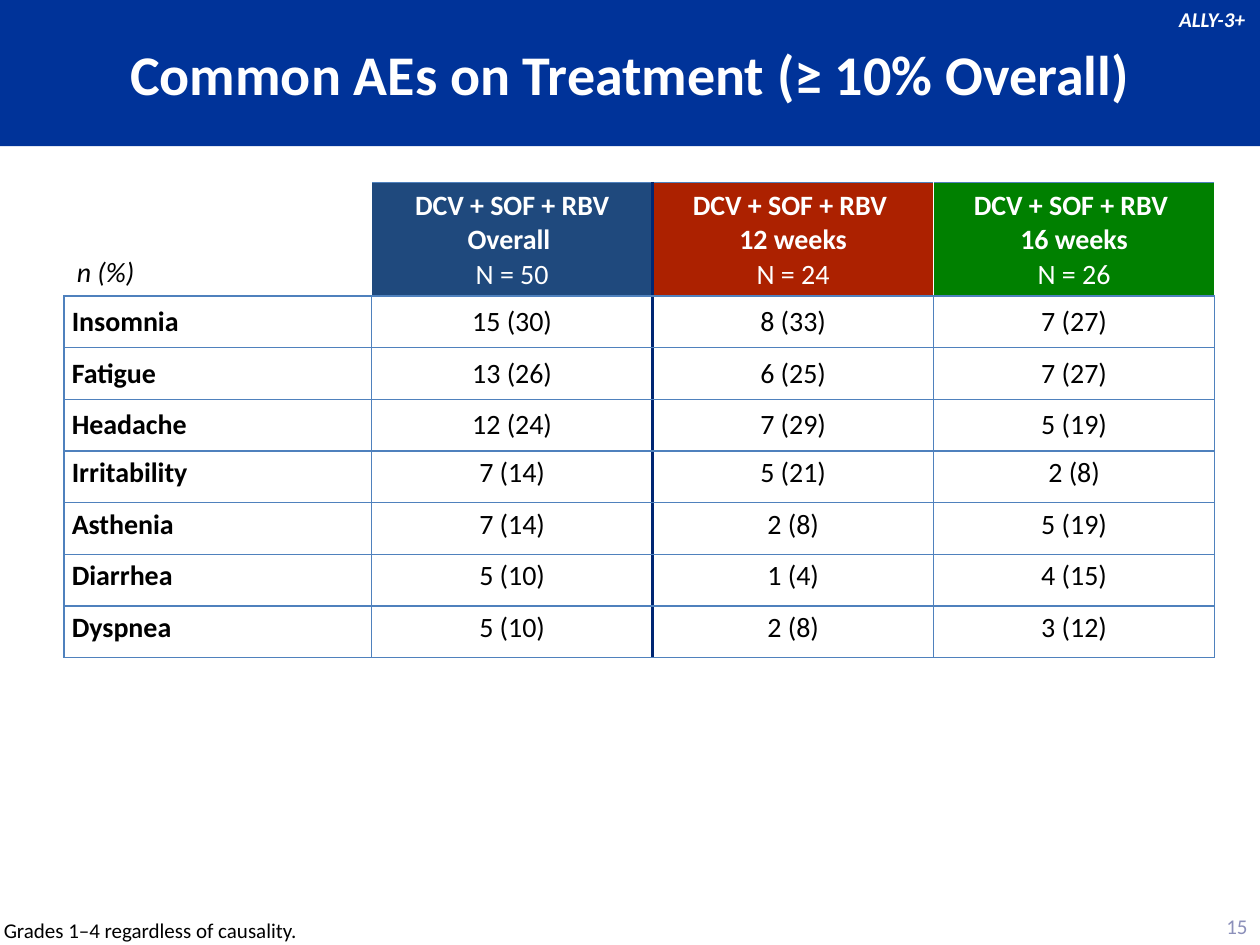
from dataclasses import dataclass
from typing import NamedTuple

from lxml import etree
from pptx import Presentation
from pptx.dml.color import RGBColor
from pptx.enum.text import MSO_ANCHOR, MSO_AUTO_SIZE, PP_ALIGN
from pptx.oxml.ns import qn
from pptx.util import Inches, Pt

LEFT, MID, RIGHT = PP_ALIGN.LEFT, PP_ALIGN.CENTER, PP_ALIGN.RIGHT
TOP, HALF, BASE = MSO_ANCHOR.TOP, MSO_ANCHOR.MIDDLE, MSO_ANCHOR.BOTTOM
FIT, FIXED = MSO_AUTO_SIZE.SHAPE_TO_FIT_TEXT, MSO_AUTO_SIZE.NONE


@dataclass(frozen=True)
class Theme:
    font: str = "Calibri"
    head: int = 32
    body: int = 16
    note: int = 12
    black: str = "000000"
    white: str = "FFFFFF"
    band: str = "003399"
    page: str = "8C90BA"
    grid: str = "4F81BD"
    rule: str = "002673"


class Style(NamedTuple):
    size: int
    color: str
    bold: bool = False
    slant: bool = False
    align: PP_ALIGN = LEFT


class Label(NamedTuple):
    text: str
    box: tuple[float, float, float, float]
    style: Style
    anchor: MSO_ANCHOR = TOP
    inset: tuple[float, float] = (0.1, 0.05)


class Arm(NamedTuple):
    lines: tuple[str, ...]
    fill: str


class Event(NamedTuple):
    name: str
    counts: tuple[str, str, str]
    anchor: MSO_ANCHOR = TOP


class Edge(NamedTuple):
    color: str | None
    width: float = 1


THEME = Theme()
THIN, WHITE = Edge(THEME.grid), Edge(THEME.white)
THICK, BARE = Edge(THEME.rule, 2.25), Edge(None)
PAD, SLIM = (0.1, 0.05), (0.06, 0.04)

LABELS = (
    Label("Grades 1–4 regardless of causality.", (0.03, 7.28, 2.35, 0.2),
          Style(THEME.note, THEME.black), BASE, (0, 0)),
    Label("ALLY-3+", (9.26, 0, 0.74, 0.3),
          Style(THEME.note, THEME.white, bold=True, slant=True)),
    Label("15", (9.63, 7.2, 0.37, 0.3),
          Style(THEME.note, THEME.page, align=RIGHT), HALF),
)
ARMS = (
    Arm(("DCV + SOF + RBV", "Overall ", "N = 50"), "1F497D"),
    Arm(("DCV + SOF + RBV \v12 weeks", "N = 24"), "AC2100"),
    Arm(("DCV + SOF + RBV \v16 weeks", "N = 26"), "008000"),
)
EVENTS = (
    Event("Insomnia", ("15 (30)", "8 (33)", "7 (27)"), HALF),
    Event("Fatigue", ("13 (26)", "6 (25)", "7 (27)"), HALF),
    Event("Headache", ("12 (24)", "7 (29)", "5 (19)"), HALF),
    Event("Irritability", ("7 (14)", "5 (21)", "2 (8)")),
    Event("Asthenia", ("7 (14)", "2 (8)", "5 (19)")),
    Event("Diarrhea", ("5 (10)", "1 (4)", "4 (15)")),
    Event("Dyspnea", ("5 (10)", "2 (8)", "3 (12)")),
)


def paint(target, color: str) -> None:
    target.fill.solid()
    target.fill.fore_color.rgb = RGBColor.from_string(color)


def dress(para, style: Style) -> None:
    """Format a paragraph and its runs."""
    para.alignment = style.align
    for run in para.runs:
        font = run.font
        font.name, font.size = THEME.font, Pt(style.size)
        font.bold, font.italic = style.bold, style.slant
        font.color.rgb = RGBColor.from_string(style.color)


def pad(target, inset: tuple[float, float]) -> None:
    """Set side and end margins of a cell or text frame."""
    side, end = map(Inches, inset)
    target.margin_left = target.margin_right = side
    target.margin_top = target.margin_bottom = end


def frame(cell, left: Edge, right: Edge, top: Edge, base: Edge) -> None:
    """Draw the four borders of a cell."""
    props = cell._tc.get_or_add_tcPr()
    for spot, (side, edge) in enumerate(zip("LRTB", (left, right, top, base))):
        line = etree.Element(qn(f"a:ln{side}"), w=str(Pt(edge.width)))
        if edge.color:
            fill = etree.SubElement(line, qn("a:solidFill"))
            etree.SubElement(fill, qn("a:srgbClr"), val=edge.color)
        else:
            etree.SubElement(line, qn("a:noFill"))
        props.insert(spot, line)


def fill_cell(cell, text: str, style: Style, anchor: MSO_ANCHOR,
              inset: tuple[float, float], color: str | None = None) -> None:
    cell.text_frame.text = text
    for para in cell.text_frame.paragraphs:
        dress(para, style)
    cell.vertical_anchor = anchor
    pad(cell, inset)
    if color:
        paint(cell, color)
    else:
        cell.fill.background()


def add_title(slide, text: str) -> None:
    title = slide.shapes.title
    title.left, title.top, title.width, title.height = map(
        Inches, (0, 0, 10, 1.16))
    paint(title, THEME.band)
    words = title.text_frame
    words.text = text
    words.auto_size, words.vertical_anchor = FIXED, HALF
    dress(words.paragraphs[0], Style(THEME.head, THEME.white, True, align=MID))


def add_label(slide, label: Label) -> None:
    words = slide.shapes.add_textbox(*map(Inches, label.box)).text_frame
    words.text = label.text
    words.word_wrap, words.auto_size = False, FIT
    words.vertical_anchor = label.anchor
    pad(words, label.inset)
    dress(words.paragraphs[0], label.style)


def add_table(slide) -> None:
    wide, high = (2.44, 2.23, 2.23, 2.23), (0.9,) + (0.41,) * len(EVENTS)
    box = map(Inches, (0.51, 1.45, sum(wide), sum(high)))
    table = slide.shapes.add_table(len(high), len(wide), *box).table
    table.first_row = table.horz_banding = False
    for col, width in zip(table.columns, wide):
        col.width = Inches(width)
    for row, height in zip(table.rows, high):
        row.height = Inches(height)

    corner = table.cell(0, 0)
    fill_cell(corner, "n (%)", Style(THEME.body, THEME.black, slant=True),
              BASE, PAD)
    frame(corner, BARE, WHITE, BARE, THIN)
    edges = (WHITE, THICK, WHITE, WHITE)
    head = Style(THEME.body, THEME.white, bold=True, align=MID)
    for col, arm in enumerate(ARMS, 1):
        cell = table.cell(0, col)
        fill_cell(cell, "\n".join(arm.lines), head, TOP, PAD, arm.fill)
        dress(cell.text_frame.paragraphs[-1], head._replace(bold=False))
        frame(cell, edges[col - 1], edges[col], THIN, THIN)

    edges = (THIN, THIN, THICK, THIN, THIN)
    name = Style(THEME.body, THEME.black, bold=True)
    count = Style(THEME.body, THEME.black, align=MID)
    for row, event in enumerate(EVENTS, 1):
        for col, text in enumerate((event.name, *event.counts)):
            cell = table.cell(row, col)
            fill_cell(cell, text, count if col else name, event.anchor, SLIM)
            frame(cell, edges[col], edges[col + 1], THIN, THIN)


def main() -> None:
    deck = Presentation()
    deck.slide_width, deck.slide_height = Inches(10), Inches(7.5)
    slide = deck.slides.add_slide(deck.slide_layouts.get_by_name("Title Only"))
    add_title(slide, "Common AEs on Treatment (≥ 10% Overall)")
    for label in LABELS:
        add_label(slide, label)
    add_table(slide)
    deck.save("out.pptx")


if __name__ == "__main__":
    main()
